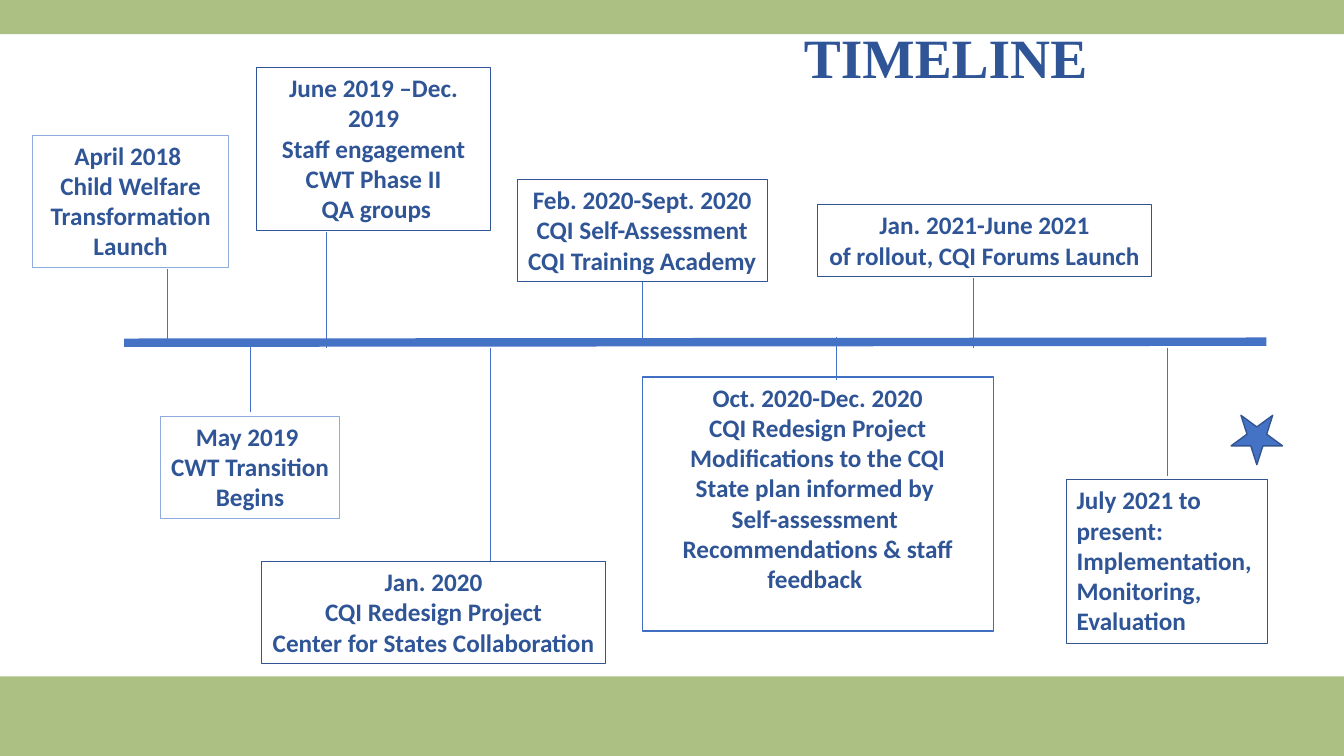
from lxml import etree
from pptx import Presentation
from pptx.dml.color import RGBColor
from pptx.enum.shapes import MSO_CONNECTOR, MSO_SHAPE
from pptx.enum.text import MSO_ANCHOR, MSO_AUTO_SIZE, PP_ALIGN
from pptx.oxml.ns import qn
from pptx.util import Inches, Pt

COLORS = {
    "band": "ADC084",
    "text": "2F5597",
    "line": "4472C4",
    "pale": "8FAADC",
    "navy": "2F5597",
    "slate": "325491",
    "bright": "3F6FC3",
}

# Stem: x, y at the axis, y at the box. Box: left, top, width, height.
EVENTS = [
    dict(stem=(1.66, 3.36, 2.67), box=(0.32, 1.34, 1.95, 1.31), border="pale",
         lines=["April 2018 ", "Child Welfare Transformation Launch"]),
    dict(stem=(2.48, 3.4, 4.09), box=(1.59, 4.13, 1.78, 1.01), border="pale", wrap=False,
         lines=["May 2019 ", "CWT Transition", "Begins"]),
    dict(stem=(3.24, 3.45, 2.3), box=(2.54, 0.67, 2.33, 1.62), border="navy",
         lines=["June 2019 –Dec. 2019", "Staff engagement", "CWT Phase II", " QA groups"]),
    dict(stem=(4.86, 3.45, 5.57), box=(2.59, 5.57, 3.42, 1.01), border="navy", wrap=False,
         lines=["Jan. 2020", "CQI Redesign Project", "Center for States Collaboration"]),
    dict(stem=(6.37, 3.36, 2.79), box=(5.13, 1.78, 2.48, 1.01), border="navy", wrap=False,
         joined_side=2,
         lines=["Feb. 2020-Sept. 2020", "CQI Self-Assessment", "CQI Training Academy"]),
    dict(stem=(8.3, 3.34, 3.77), box=(6.37, 3.74, 3.48, 2.52), border="bright", grow=False,
         lines=["Oct. 2020-Dec. 2020", "CQI Redesign Project", "Modifications to the CQI",
                "State plan informed by ", "Self-assessment ",
                "Recommendations & staff feedback "]),
    dict(stem=(9.65, 3.45, 2.76), box=(8.11, 2.03, 3.31, 0.71), border="slate", wrap=False,
         lines=["Jan. 2021-June 2021", "of rollout, CQI Forums Launch"]),
    dict(stem=(11.58, 3.45, 4.72), box=(10.58, 4.76, 1.99, 1.62), border="slate",
         align=PP_ALIGN.LEFT,
         lines=["July 2021 to present: Implementation, Monitoring, Evaluation"]),
]


def rgb(name):
    return RGBColor.from_string(COLORS[name])


def write(tf, lines, size=18, font="Calibri", color="text", align=PP_ALIGN.CENTER,
          spacing=None):
    for i, text in enumerate(lines):
        p = tf.paragraphs[0] if i == 0 else tf.add_paragraph()
        p.alignment = align
        p.line_spacing = spacing
        r = p.add_run()
        r.text = text
        r.font.size = Pt(size)
        r.font.name = font
        r.font.bold = True
        r.font.color.rgb = rgb(color)


def add_shape(s, kind, box, fill=None, border=None, width=0.75):
    sp = s.shapes.add_shape(kind, *map(Inches, box))
    sp.shadow.inherit = False
    if fill:
        sp.fill.solid()
        sp.fill.fore_color.rgb = rgb(fill)
    else:
        sp.fill.background()
    if border:
        sp.line.color.rgb = rgb(border)
        sp.line.width = Pt(width)
    else:
        sp.line.fill.background()
    return sp


def add_line(s, start, end, width):
    line = s.shapes.add_connector(MSO_CONNECTOR.STRAIGHT, *map(Inches, (*start, *end)))
    line.line.color.rgb = rgb("line")
    line.line.width = Pt(width)
    etree.SubElement(line._element.spPr, qn("a:effectLst"))
    return line


def add_title(s, text, box):
    title = s.shapes.title
    title.left, title.top, title.width, title.height = map(Inches, box)
    tf = title.text_frame
    tf.auto_size = MSO_AUTO_SIZE.NONE
    tf.vertical_anchor = MSO_ANCHOR.MIDDLE
    write(tf, [text], size=39.6, font="Times New Roman", spacing=0.9)


def add_event(s, stem, box, border, lines, wrap=True, grow=True,
              align=PP_ALIGN.CENTER, joined_side=None):
    """Add a bordered label and the stem that ties it to the axis."""
    x, axis_y, box_y = stem
    line = add_line(s, (x, axis_y), (x, box_y), 0.5)
    sp = add_shape(s, MSO_SHAPE.RECTANGLE, box, border=border)
    tf = sp.text_frame
    tf.word_wrap = wrap
    tf.auto_size = MSO_AUTO_SIZE.SHAPE_TO_FIT_TEXT if grow else MSO_AUTO_SIZE.NONE
    tf.vertical_anchor = MSO_ANCHOR.TOP
    write(tf, lines, align=align)
    if joined_side is not None:
        line.end_connect(sp, joined_side)


def main():
    prs = Presentation()
    prs.slide_width, prs.slide_height = Inches(13.33), Inches(7.5)
    s = prs.slides.add_slide(prs.slide_layouts[5])

    for top, height in ((6.71, 0.79), (0, 0.34)):
        add_shape(s, MSO_SHAPE.RECTANGLE, (0, top, 13.33, height), fill="band")
    add_title(s, "TIMELINE", (4.86, 0.35, 9.04, 0.51))

    add_line(s, (1.23, 3.4), (12.56, 3.39), 6)
    for event in EVENTS:
        add_event(s, **event)

    star = add_shape(s, MSO_SHAPE.STAR_5_POINT, (12.21, 4.12, 0.51, 0.49),
                     fill="line", border="slate", width=1)
    star.rotation = 180

    prs.save("out.pptx")


if __name__ == "__main__":
    main()
